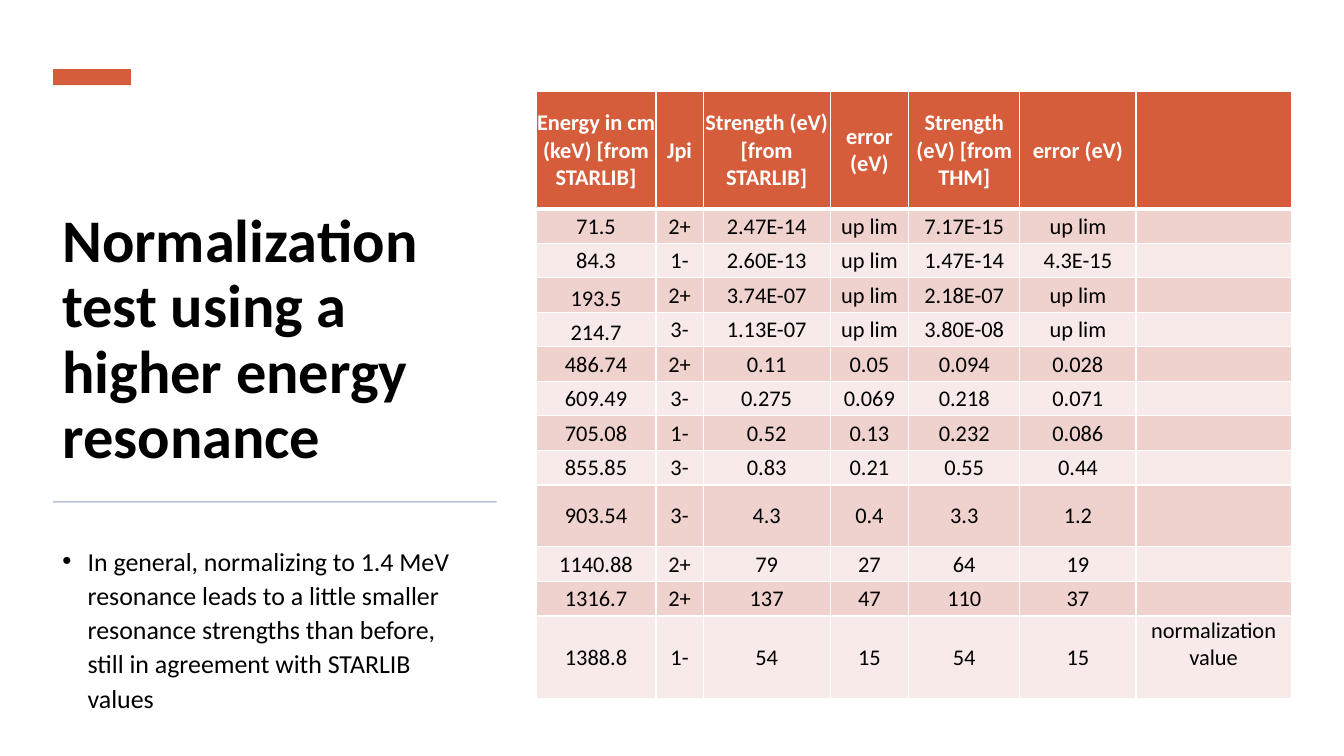
from lxml.etree import SubElement
from pptx import Presentation
from pptx.dml.color import RGBColor
from pptx.enum.shapes import MSO_SHAPE as Preset
from pptx.enum.text import MSO_ANCHOR as Anchor, PP_ALIGN as Align
from pptx.oxml.ns import qn
from pptx.util import Cm, Pt

HEADINGS = ["Energy in cm (keV) [from STARLIB]", "Jpi", "Strength (eV) [from STARLIB]",
            "error (eV)", "Strength (eV) [from THM]", "error (eV)", ""]
RESONANCES = [
    ["71.5", "2+", "2.47E-14", "up lim", "7.17E-15", "up lim", ""],
    ["84.3", "1-", "2.60E-13", "up lim", "1.47E-14", "4.3E-15", ""],
    ["193.5", "2+", "3.74E-07", "up lim", "2.18E-07", "up lim", ""],
    ["214.7", "3-", "1.13E-07", "up lim", "3.80E-08", "up lim", ""],
    ["486.74", "2+", "0.11", "0.05", "0.094", "0.028", ""],
    ["609.49", "3-", "0.275", "0.069", "0.218", "0.071", ""],
    ["705.08", "1-", "0.52", "0.13", "0.232", "0.086", ""],
    ["855.85", "3-", "0.83", "0.21", "0.55", "0.44", ""],
    ["903.54", "3-", "4.3", "0.4", "3.3", "1.2", ""],
    ["1140.88", "2+", "79", "27", "64", "19", ""],
    ["1316.7", "2+", "137", "47", "110", "37", ""],
    ["1388.8", "1-", "54", "15", "54", "15", "normalization value"],
]
COLUMN_WIDTHS = [3.02, 1.19, 3.2, 1.98, 2.8, 2.93, 3.91]
ROW_HEIGHTS = [2.95] + [0.87] * 8 + [1.56] + [0.87] * 2 + [2.08]
ANCHORS = {(3, 0): Anchor.BOTTOM, (4, 0): Anchor.BOTTOM, (12, 6): Anchor.TOP}


def color(value):
    return RGBColor.from_string(value)


class ResonanceSlide:
    font = "Calibri"
    ink = "000000"
    paper = "FFFFFF"
    accent = "D55D3B"
    rule = "BAC5D8"
    bands = ("F7EAE8", "EFD2CE")

    def __init__(self, presentation):
        self.slide = presentation.slides.add_slide(presentation.slide_layouts[6])

    def style(self, paragraph, size, ink, bold=False):
        font = paragraph.font
        font.name, font.size, font.bold = self.font, Pt(size), bold
        font.color.rgb = color(ink)

    def bar(self, left, top, width, height, fill):
        bar = self.slide.shapes.add_shape(
            Preset.RECTANGLE, Cm(left), Cm(top), Cm(width), Cm(height))
        bar.shadow.inherit = False
        bar.fill.solid()
        bar.fill.fore_color.rgb = color(fill)
        bar.line.fill.background()

    def text(self, wording, left, top, width, height, size, spacing,
             bold=False, anchor=Anchor.TOP, bullet=False):
        frame = self.slide.shapes.add_textbox(
            Cm(left), Cm(top), Cm(width), Cm(height)).text_frame
        frame.word_wrap = True
        frame.vertical_anchor = anchor
        paragraph = frame.paragraphs[0]
        paragraph.text = wording
        paragraph.line_spacing = spacing
        if bullet:
            properties = paragraph._p.get_or_add_pPr()
            properties.set("marL", str(Cm(0.64)))
            properties.set("indent", str(Cm(-0.64)))
            SubElement(properties, qn("a:buFont")).set("typeface", "Arial")
            SubElement(properties, qn("a:buChar")).set("char", "•")
        self.style(paragraph, size, self.ink, bold)

    def borders(self, cell, row):
        properties = cell._tc.get_or_add_tcPr()
        widths = {"L": 1, "R": 1, "T": 3 if row == 1 else 1, "B": 3 if row == 0 else 1}
        for side, width in widths.items():
            line = SubElement(properties, qn(f"a:ln{side}"), w=str(Pt(width)))
            fill = SubElement(line, qn("a:solidFill"))
            SubElement(fill, qn("a:srgbClr"), val=self.paper)

    def table(self, rows, left, top, widths, heights):
        table = self.slide.shapes.add_table(
            len(rows), len(widths), Cm(left), Cm(top),
            Cm(sum(widths)), Cm(sum(heights))).table
        for column, width in zip(table.columns, widths):
            column.width = Cm(width)
        for r, (values, height) in enumerate(zip(rows, heights)):
            table.rows[r].height = Cm(height)
            heading = r == 0
            for c, value in enumerate(values):
                cell = table.cell(r, c)
                cell.margin_left = cell.margin_right = cell.margin_top = Cm(0.02)
                cell.margin_bottom = 0
                cell.vertical_anchor = ANCHORS.get((r, c), Anchor.MIDDLE)
                self.borders(cell, r)
                cell.fill.solid()
                cell.fill.fore_color.rgb = color(self.accent if heading else self.bands[r % 2])
                cell.text = value
                paragraph = cell.text_frame.paragraphs[0]
                paragraph.alignment = Align.CENTER
                self.style(paragraph, 16, self.paper if heading else self.ink, heading)


def main():
    presentation = Presentation()
    presentation.slide_width, presentation.slide_height = Cm(33.87), Cm(19.05)
    page = ResonanceSlide(presentation)
    page.text("Normalization test using a higher energy resonance",
              1.32, 3.12, 11.18, 8.89, 43.2, 0.9, bold=True, anchor=Anchor.BOTTOM)
    page.text("In general, normalizing to 1.4 MeV resonance leads to a little smaller "
              "resonance strengths than before, still in agreement with STARLIB values",
              1.32, 13.54, 10.92, 4.95, 18.5, 1.1, bullet=True)
    page.bar(1.34, 1.74, 1.96, 0.41, page.accent)
    page.bar(1.34, 12.62, 11.18, 0.05, page.rule)
    page.table([HEADINGS] + RESONANCES, 13.51, 2.31, COLUMN_WIDTHS, ROW_HEIGHTS)
    presentation.save("out.pptx")


if __name__ == "__main__":
    main()
